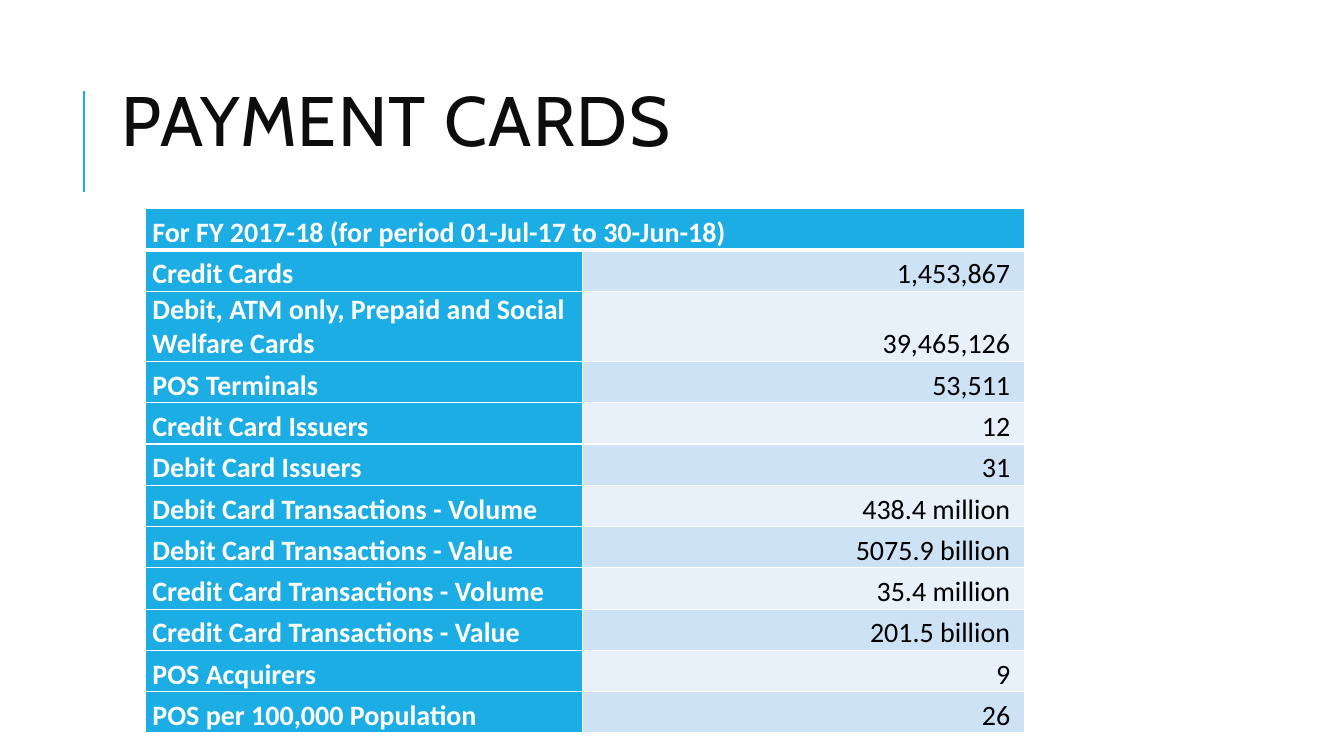
from dataclasses import dataclass

from lxml.etree import SubElement
from pptx import Presentation
from pptx.dml.color import RGBColor
from pptx.enum.shapes import MSO_CONNECTOR
from pptx.enum.text import MSO_ANCHOR, MSO_AUTO_SIZE, PP_ALIGN
from pptx.oxml.ns import qn
from pptx.slide import Slide
from pptx.table import _Cell
from pptx.util import Cm, Pt

COLOURS = {
    "accent": "1CADE4",
    "band_dark": "CDE3F5",
    "band_light": "E8F1FA",
    "title": "0D0D0D",
    "black": "000000",
    "white": "FFFFFF",
}
HEADING = "For FY 2017-18 (for period 01-Jul-17 to 30-Jun-18)"
COLUMN_WIDTHS = (Cm(11.02), Cm(11.13))
ROW_HEIGHT = Cm(1.04)
TALL_ROW_HEIGHT = Cm(1.77)
THIN, THICK = Pt(1), Pt(3)


@dataclass(frozen=True)
class CardFigure:
    label: str
    value: str
    tall: bool = False


@dataclass(frozen=True)
class CellStyle:
    fill: str
    colour: str
    bold: bool
    alignment: PP_ALIGN
    margin_right: Cm


FIGURES = (
    CardFigure("Credit Cards", "1,453,867"),
    CardFigure("Debit, ATM only, Prepaid and Social Welfare Cards", "39,465,126", tall=True),
    CardFigure("POS Terminals", "53,511"),
    CardFigure("Credit Card Issuers", "12"),
    CardFigure("Debit Card Issuers", "31"),
    CardFigure("Debit Card Transactions - Volume", "438.4 million"),
    CardFigure("Debit Card Transactions - Value", "5075.9 billion"),
    CardFigure("Credit Card Transactions - Volume", "35.4 million"),
    CardFigure("Credit Card Transactions - Value", "201.5 billion"),
    CardFigure("POS Acquirers", "9"),
    CardFigure("POS per 100,000 Population", "26"),
)
LABEL_STYLE = CellStyle("accent", "white", True, PP_ALIGN.LEFT, Cm(0.18))
VALUE_STYLES = tuple(
    CellStyle(band, "black", False, PP_ALIGN.RIGHT, Cm(0.35))
    for band in ("band_dark", "band_light")
)


def colour(name: str) -> RGBColor:
    return RGBColor.from_string(COLOURS[name])


def set_borders(cell: _Cell, top: int = THIN, bottom: int = THIN) -> None:
    """Draw white borders; call before filling, as the schema puts lines first."""
    properties = cell._tc.get_or_add_tcPr()
    for side, width in (("L", THIN), ("R", THIN), ("T", top), ("B", bottom)):
        line = SubElement(properties, qn(f"a:ln{side}"), w=str(width))
        fill = SubElement(line, qn("a:solidFill"))
        SubElement(fill, qn("a:srgbClr"), val=COLOURS["white"])


def write_cell(cell: _Cell, text: str, style: CellStyle) -> None:
    cell.fill.solid()
    cell.fill.fore_color.rgb = colour(style.fill)
    cell.vertical_anchor = MSO_ANCHOR.BOTTOM
    cell.margin_left, cell.margin_right = Cm(0.18), style.margin_right
    cell.margin_top = cell.margin_bottom = 0
    cell.text_frame.text = text
    paragraph = cell.text_frame.paragraphs[0]
    paragraph.alignment = style.alignment
    font = paragraph.runs[0].font
    font.name, font.size, font.bold = "Calibri", Pt(20), style.bold
    font.color.rgb = colour(style.colour)


def add_title(page: Slide) -> None:
    title = page.shapes.title
    title.left, title.top = Cm(2.82), Cm(1.09)
    title.width, title.height = Cm(27), Cm(4.17)
    frame = title.text_frame
    frame.text = "PAYMENT CARDS"
    frame.auto_size = MSO_AUTO_SIZE.NONE
    frame.vertical_anchor = MSO_ANCHOR.MIDDLE
    paragraph = frame.paragraphs[0]
    paragraph.alignment = PP_ALIGN.LEFT
    paragraph.line_spacing = 0.8
    span = paragraph.runs[0]
    span.font.name, span.font.size = "Cabin", Pt(50)
    span.font.color.rgb = colour("title")
    span._r.get_or_add_rPr().set("spc", "100")


def add_title_rule(page: Slide) -> None:
    rule = page.shapes.add_connector(
        MSO_CONNECTOR.STRAIGHT, Cm(2.12), Cm(4.83), Cm(2.12), Cm(2.29)
    )
    rule.line.color.rgb = colour("accent")
    rule.line.width = Pt(1.5)
    SubElement(rule._element.spPr, qn("a:effectLst"))


def add_card_table(page: Slide) -> None:
    heights = [ROW_HEIGHT] + [
        TALL_ROW_HEIGHT if figure.tall else ROW_HEIGHT for figure in FIGURES
    ]
    table = page.shapes.add_table(
        len(heights), len(COLUMN_WIDTHS), Cm(3.66), Cm(5.26),
        sum(COLUMN_WIDTHS), sum(heights),
    ).table
    for column, width in zip(table.columns, COLUMN_WIDTHS):
        column.width = width
    for row, height in zip(table.rows, heights):
        row.height = height

    heading = table.cell(0, 0)
    heading.merge(table.cell(0, 1))
    for cell in table.rows[0].cells:
        set_borders(cell, bottom=THICK)
    write_cell(heading, HEADING, LABEL_STYLE)

    for index, figure in enumerate(FIGURES):
        label, value = table.rows[index + 1].cells
        for cell in (label, value):
            set_borders(cell, top=THICK if index == 0 else THIN)
        write_cell(label, figure.label, LABEL_STYLE)
        write_cell(value, figure.value, VALUE_STYLES[index % 2])


def main() -> None:
    deck = Presentation()
    deck.slide_width, deck.slide_height = Cm(33.87), Cm(19.05)
    page = deck.slides.add_slide(deck.slide_layouts.get_by_name("Title Only"))
    add_title_rule(page)
    add_title(page)
    add_card_table(page)
    deck.save("out.pptx")


if __name__ == "__main__":
    main()
